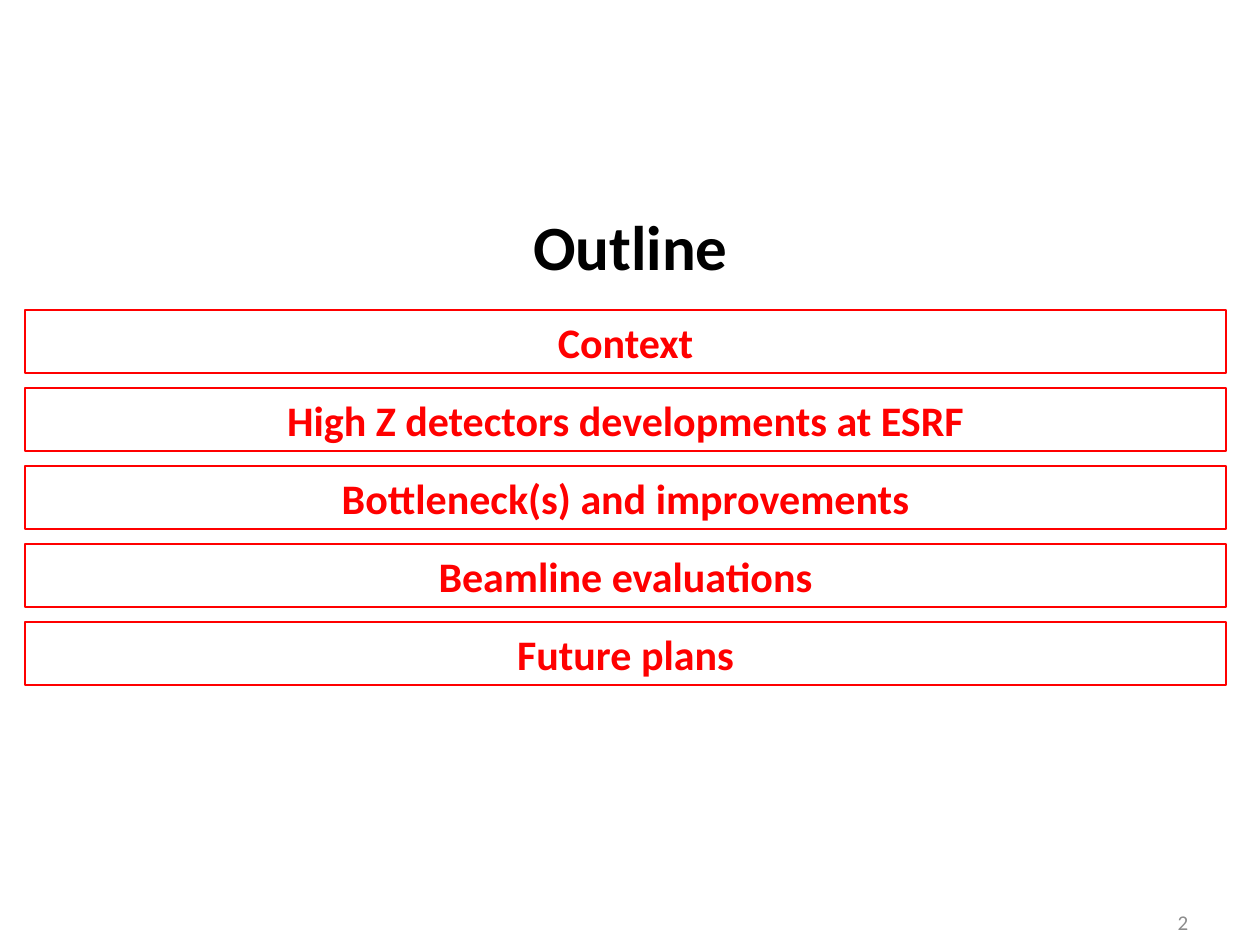
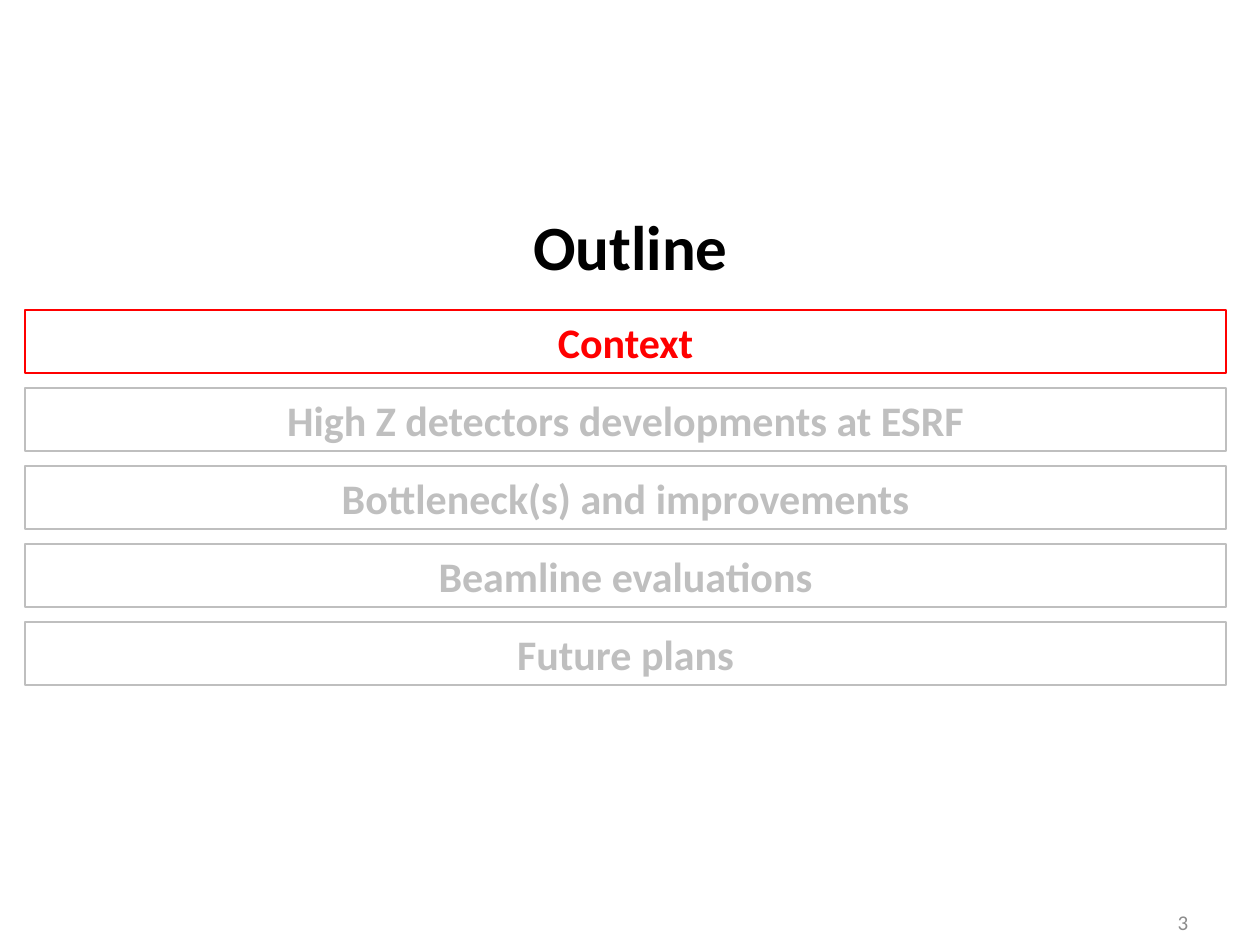
from dataclasses import dataclass

from pptx import Presentation
from pptx.dml.color import RGBColor
from pptx.enum.shapes import MSO_SHAPE
from pptx.enum.text import MSO_ANCHOR, MSO_AUTO_SIZE, PP_ALIGN
from pptx.util import Emu, Pt

PX_PER_INCH = 126


@dataclass(frozen=True)
class Theme:
    font: str = "Calibri"
    title_color: RGBColor = RGBColor(0x00, 0x00, 0x00)
    active: RGBColor = RGBColor(0xFF, 0x00, 0x00)
    muted: RGBColor = RGBColor(0xBF, 0xBF, 0xBF)
    number_color: RGBColor = RGBColor(0x8C, 0x8C, 0x8C)
    title_size: Pt = Pt(36)
    section_size: Pt = Pt(24)
    number_size: Pt = Pt(12)
    border: Pt = Pt(0.75)


THEME = Theme()

SECTIONS = [
    "Context",
    "High Z detectors developments at ESRF",
    "Bottleneck(s) and improvements",
    "Beamline evaluations",
    "Future plans",
]
SECTION_LEFT, SECTION_TOP = 25, 310
SECTION_WIDTH, SECTION_HEIGHT = 1201, 63
SECTION_PITCH = 78


def px(length):
    return Emu(round(length * 914400 / PX_PER_INCH))


def write_centred(shape, text, size, color, bold=False, anchor=MSO_ANCHOR.MIDDLE):
    frame = shape.text_frame
    frame.text = text
    frame.word_wrap = True
    frame.vertical_anchor = anchor
    para = frame.paragraphs[0]
    para.alignment = PP_ALIGN.CENTER
    font = para.runs[0].font
    font.name = THEME.font
    font.size = size
    font.bold = bold
    font.color.rgb = color


def add_title(page, text):
    box = page.shapes.add_textbox(px(95), px(175), px(1071), px(140))
    write_centred(box, text, THEME.title_size, THEME.title_color, bold=True)


def add_page_number(page, number):
    box = page.shapes.add_textbox(px(1106), px(900), px(154), px(45))
    write_centred(box, str(number), THEME.number_size, THEME.number_color)


def add_section(page, row, text, color):
    top = SECTION_TOP + row * SECTION_PITCH
    box = page.shapes.add_shape(
        MSO_SHAPE.RECTANGLE,
        px(SECTION_LEFT), px(top), px(SECTION_WIDTH), px(SECTION_HEIGHT),
    )
    box.shadow.inherit = False
    box.fill.background()
    box.line.color.rgb = color
    box.line.width = THEME.border
    write_centred(box, text, THEME.section_size, color, bold=True, anchor=MSO_ANCHOR.TOP)
    box.text_frame.auto_size = MSO_AUTO_SIZE.SHAPE_TO_FIT_TEXT


def add_outline_page(deck, number, active_sections):
    """Add the outline with only the active sections highlighted."""
    page = deck.slides.add_slide(deck.slide_layouts[6])
    add_title(page, "Outline")
    add_page_number(page, number)
    for row, section in enumerate(SECTIONS):
        color = THEME.active if section in active_sections else THEME.muted
        add_section(page, row, section, color)


def main():
    deck = Presentation()
    deck.slide_width, deck.slide_height = px(1260), px(945)
    add_outline_page(deck, 2, SECTIONS)
    add_outline_page(deck, 3, SECTIONS[:1])
    deck.save("out.pptx")


if __name__ == "__main__":
    main()
